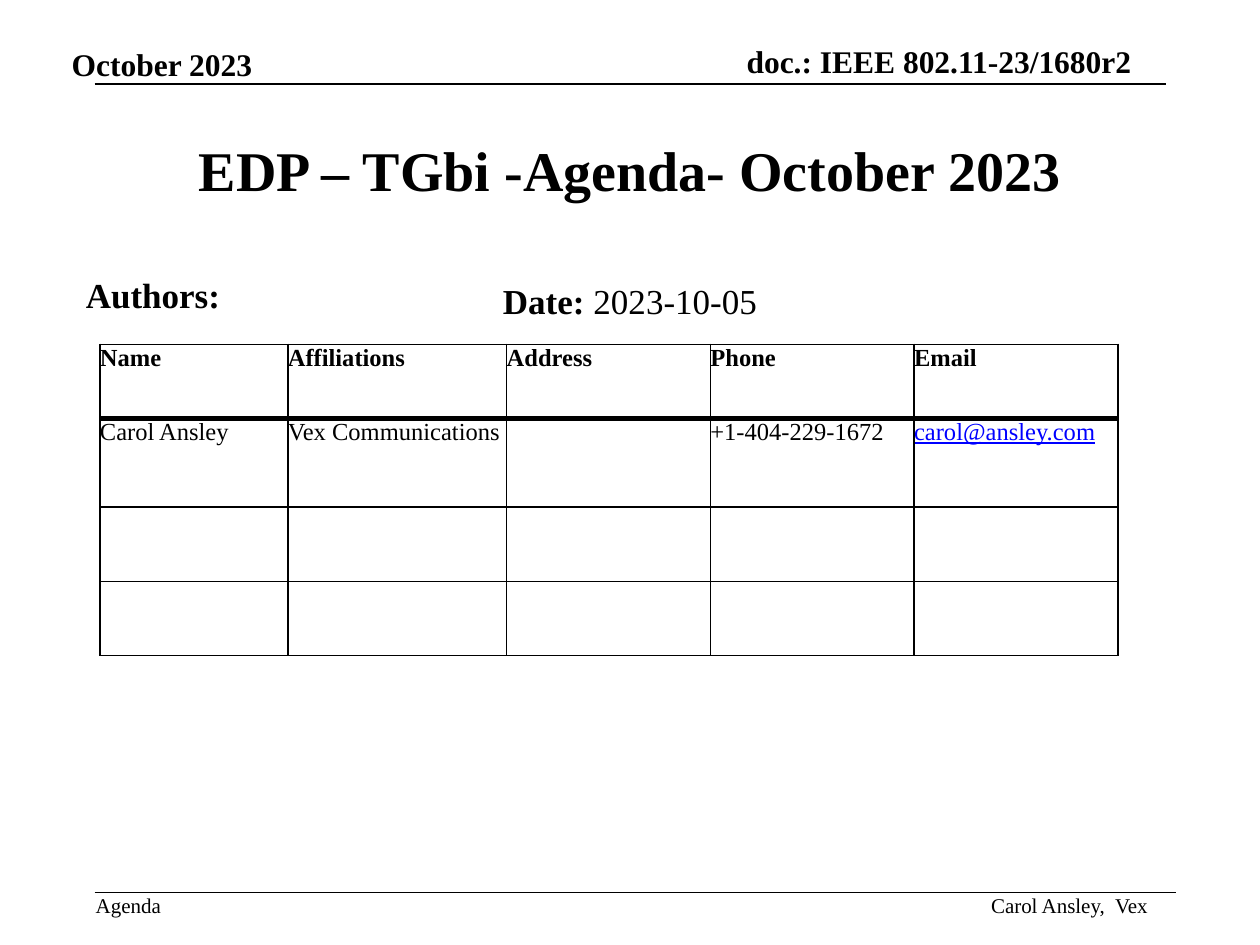
from lxml import etree
from pptx import Presentation
from pptx.dml.color import RGBColor
from pptx.enum.shapes import MSO_CONNECTOR
from pptx.enum.text import MSO_ANCHOR, MSO_AUTO_SIZE, PP_ALIGN
from pptx.oxml.ns import qn
from pptx.util import Pt

LEFT, CENTER, RIGHT = PP_ALIGN.LEFT, PP_ALIGN.CENTER, PP_ALIGN.RIGHT
TOP, MIDDLE, BOTTOM = MSO_ANCHOR.TOP, MSO_ANCHOR.MIDDLE, MSO_ANCHOR.BOTTOM
NO_AUTOFIT = MSO_AUTO_SIZE.NONE
STRAIGHT = MSO_CONNECTOR.STRAIGHT

FONT = "Times New Roman"
COLORS = {"ink": "000000", "address": "0000FF"}
HANGING = 27
THIN, THICK = 0.96, 3

COLUMN_WIDTHS = [107.4, 125.1, 116.4, 116.4, 116.4]
ROW_HEIGHTS = [42.4, 50.6, 42.4, 42.4]
AUTHOR_ROWS = [
    ["Name", "Affiliations", "Address", "Phone", "Email"],
    ["Carol Ansley", "Vex Communications", "", "+1-404-229-1672", "carol@ansley.com"],
    [""] * 5,
    [""] * 5,
]


def style_font(font, size, bold=False, color="ink"):
    font.name = FONT
    font.size = Pt(size)
    font.bold = bold
    font.color.rgb = RGBColor.from_string(COLORS[color])


def place(box, left, top, width, height):
    box.left, box.top = Pt(left), Pt(top)
    box.width, box.height = Pt(width), Pt(height)


def set_frame(box, anchor, inset, wrap):
    frame = box.text_frame
    frame.auto_size = NO_AUTOFIT
    frame.word_wrap = wrap
    frame.vertical_anchor = anchor
    frame.margin_left = frame.margin_right = Pt(inset)
    frame.margin_top = frame.margin_bottom = Pt(inset)
    return frame.paragraphs[0]


def hang(para):
    para.space_before = Pt(4)
    properties = para._p.get_or_add_pPr()
    properties.set("marL", str(Pt(HANGING)))
    properties.set("indent", str(-Pt(HANGING)))
    etree.SubElement(properties, qn("a:buNone"))


def add_label(page, text, area, size, bold=False, align=LEFT, anchor=TOP, inset=0, wrap=False):
    box = page.shapes.add_textbox(*map(Pt, area))
    para = set_frame(box, anchor, inset, wrap)
    para.text = text
    para.alignment = align
    style_font(para.font, size, bold)
    return para


def add_rule(page, left, right, y):
    rule = page.shapes.add_connector(STRAIGHT, Pt(left), Pt(y), Pt(right), Pt(y))
    rule.line.width = Pt(1)
    rule.line.color.rgb = RGBColor.from_string(COLORS["ink"])
    etree.SubElement(rule._element.spPr, qn("a:effectLst"))


def fill_title(page):
    title = page.shapes.title
    place(title, 54, 73.4, 612, 46)
    para = set_frame(title, MIDDLE, 3.6, True)
    para.text = "EDP – TGbi -Agenda- October 2023"
    para.alignment = CENTER
    style_font(para.font, 32, bold=True)


def fill_date(page):
    body = page.placeholders[1]
    place(body, 54, 156.2, 612, 31.7)
    para = set_frame(body, TOP, 3.6, True)
    para.alignment = CENTER
    hang(para)
    for text, bold in (("Date: ", True), ("2023-10-05", False)):
        span = para.add_run()
        span.text = text
        style_font(span.font, 20, bold)


def set_borders(cell, top, bottom):
    properties = cell._tc.get_or_add_tcPr()
    for side, width in (("L", THIN), ("R", THIN), ("T", top), ("B", bottom)):
        line = etree.SubElement(properties, qn(f"a:ln{side}"), w=str(Pt(width)))
        fill = etree.SubElement(line, qn("a:solidFill"))
        etree.SubElement(fill, qn("a:srgbClr"), val=COLORS["ink"])


def fill_cell(cell, text, row):
    cell.margin_left = cell.margin_right = cell.margin_top = cell.margin_bottom = 0
    set_borders(cell, THICK if row == 1 else THIN, THICK if row == 0 else THIN)
    cell.fill.background()
    para = cell.text_frame.paragraphs[0]
    para.text = text
    is_address = "@" in text
    style_font(para.font, 14, row == 0, "address" if is_address else "ink")
    para.font.underline = is_address


def add_author_table(page):
    frame = page.shapes.add_table(
        len(ROW_HEIGHTS), len(COLUMN_WIDTHS), Pt(57.1), Pt(196.8),
        Pt(sum(COLUMN_WIDTHS)), Pt(sum(ROW_HEIGHTS)))
    table = frame.table
    table.first_row = table.horz_banding = False
    for column, width in zip(table.columns, COLUMN_WIDTHS):
        column.width = Pt(width)
    for row, height in zip(table.rows, ROW_HEIGHTS):
        row.height = Pt(height)
    for row, texts in enumerate(AUTHOR_ROWS):
        for column, text in enumerate(texts):
            fill_cell(table.cell(row, column), text, row)


def add_header_and_footer(page):
    add_label(page, "October 2023", (41, 26, 104.4, 21.6), 18, True, anchor=BOTTOM)
    add_label(page, "doc.: IEEE 802.11-23/1680r2", (423.4, 23.8, 223.2, 21.6), 18, True,
              RIGHT, BOTTOM)
    add_rule(page, 54, 666, 48)
    add_label(page, "Agenda", (54.7, 510, 38.2, 14.4), 12)
    add_label(page, "Carol Ansley,  Vex", (562, 510, 94, 14.4), 12, align=RIGHT, anchor=BOTTOM)
    add_rule(page, 54, 672, 510)


def main():
    deck = Presentation()
    deck.slide_width, deck.slide_height = Pt(720), Pt(540)
    page = deck.slides.add_slide(deck.slide_layouts[1])
    add_header_and_footer(page)
    fill_title(page)
    fill_date(page)
    hang(add_label(page, "Authors:", (45.4, 152.6, 106.6, 29.5), 20, True, inset=3.6, wrap=True))
    add_author_table(page)
    deck.save("out.pptx")


if __name__ == "__main__":
    main()
